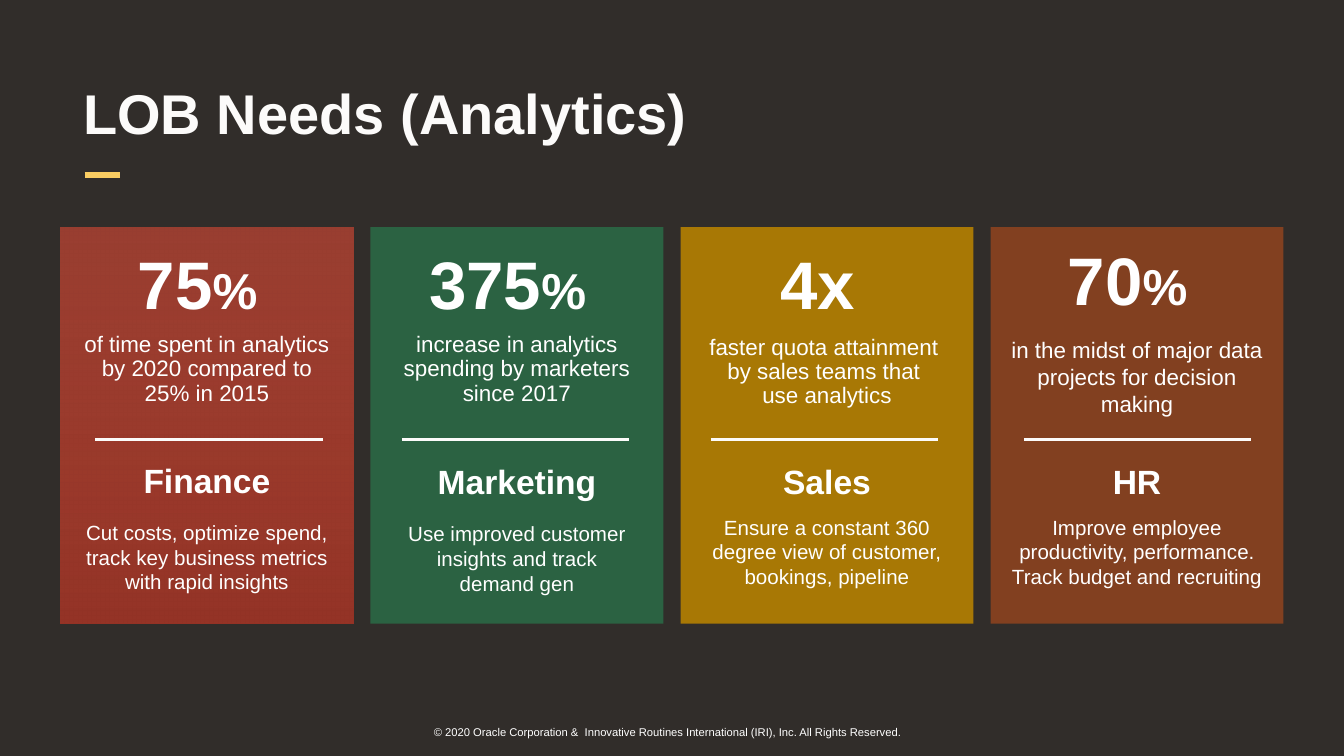
from dataclasses import dataclass

from pptx import Presentation
from pptx.dml.color import RGBColor
from pptx.enum.shapes import MSO_CONNECTOR, MSO_SHAPE
from pptx.enum.text import MSO_ANCHOR, MSO_AUTO_SIZE, PP_ALIGN
from pptx.oxml.xmlchemy import OxmlElement
from pptx.util import Inches, Pt

RECTANGLE = MSO_SHAPE.RECTANGLE
STRAIGHT = MSO_CONNECTOR.STRAIGHT
TOP, MIDDLE, BOTTOM = MSO_ANCHOR.TOP, MSO_ANCHOR.MIDDLE, MSO_ANCHOR.BOTTOM
LEFT, CENTER = PP_ALIGN.LEFT, PP_ALIGN.CENTER
NO_AUTOFIT = MSO_AUTO_SIZE.NONE
TITLE_ONLY = 5

COLORS = {
    "background": "312D2A",
    "title": "FCFBFA",
    "text": "FFFFFF",
    "accent": "FACD62",
    "finance_top": "C74634",
    "finance_bottom": "953426",
    "marketing": "2B6242",
    "sales": "A87805",
    "hr": "824020",
}
FONT = "Arial"
NO_INSET = (0, 0)
SMALL_INSET = (0.07, 0.04)

SLIDE_WIDTH = 10
SLIDE_HEIGHT = SLIDE_WIDTH * 9 / 16
CARD_LEFT, CARD_TOP, CARD_WIDTH, CARD_HEIGHT = 0.45, 1.69, 2.18, 2.95
CARD_PITCH = (7.37 - CARD_LEFT) / 3
DIVIDER_TOP, DIVIDER_WIDTH = 3.27, 1.69


@dataclass
class Card:
    name: str
    fill: str
    value: str
    unit: str
    fact: str
    need: str
    value_top: float
    fact_top: float
    fact_width: float
    fact_spacing: float
    name_middle: float
    need_top: float
    need_width: float
    divider_left: float


CARDS = [
    Card("Finance", "finance", "75", "%",
         "of time spent in analytics by 2020 compared to 25% in 2015",
         "Cut costs, optimize spend, track key business metrics with rapid insights",
         1.87, 2.44, 2.05, 0.9, 3.6, 3.87, 2.05, 0.71),
    Card("Marketing", "marketing", "375", "%",
         "increase in analytics spending by marketers\nsince 2017",
         "Use improved customer insights and track demand gen",
         1.87, 2.44, 2.07, 0.9, 3.61, 3.88, 1.71, 2.99),
    Card("Sales", "sales", "4x", "",
         "faster quota attainment \nby sales teams that \nuse analytics",
         "Ensure a constant 360 degree view of customer, bookings, pipeline",
         1.87, 2.46, 2.11, 0.9, 3.61, 3.83, 1.99, 5.29),
    Card("HR", "hr", "70", "%",
         "in the midst of major data projects for decision making",
         "Improve employee productivity, performance. Track budget and recruiting",
         1.84, 2.46, 2.05, 1.0, 3.61, 3.83, 2.05, 7.62),
]


class SlideBuilder:
    def __init__(self, slide):
        self.slide = slide
        slide.background.fill.solid()
        slide.background.fill.fore_color.rgb = self.color("background")

    def color(self, name):
        return RGBColor.from_string(COLORS[name])

    def format_frame(self, frame, inset, anchor):
        frame.word_wrap = True
        frame.auto_size = NO_AUTOFIT
        frame.vertical_anchor = anchor
        frame.margin_left = frame.margin_right = Inches(inset[0])
        frame.margin_top = frame.margin_bottom = Inches(inset[1])

    def format_paragraph(self, paragraph, size, bold, align, spacing, color="text"):
        paragraph.alignment = align
        paragraph.line_spacing = spacing
        font = paragraph.font
        font.name, font.size, font.bold = FONT, Pt(size), bold
        font.color.rgb = self.color(color)

    def title(self, text, left, top, width, height):
        shape = self.slide.shapes.title
        shape.left, shape.top = Inches(left), Inches(top)
        shape.width, shape.height = Inches(width), Inches(height)
        self.format_frame(shape.text_frame, NO_INSET, BOTTOM)
        paragraph = shape.text_frame.paragraphs[0]
        paragraph.text = text
        self.format_paragraph(paragraph, 30, True, LEFT, 0.95, "title")

    def text(self, text, left, top, width, height, size, bold=False, align=CENTER,
             spacing=1.0, inset=NO_INSET, anchor=TOP):
        shape = self.slide.shapes.add_textbox(
            Inches(left), Inches(top), Inches(width), Inches(height))
        self.format_frame(shape.text_frame, inset, anchor)
        paragraph = shape.text_frame.paragraphs[0]
        paragraph.text = text
        self.format_paragraph(paragraph, size, bold, align, spacing)
        return paragraph

    def figure(self, value, unit, left, top):
        paragraph = self.text(value, left, top, CARD_WIDTH, 0.48, 36, True, spacing=0.9)
        if unit:
            run = paragraph.add_run()
            run.text = unit
            run.font.size = Pt(27)
        paragraph.add_run().text = " "
        paragraph.add_line_break()

    def panel(self, left, fill):
        shape = self.slide.shapes.add_shape(
            RECTANGLE, Inches(left), Inches(CARD_TOP), Inches(CARD_WIDTH), Inches(CARD_HEIGHT))
        shape.shadow.inherit = False
        shape.line.fill.background()
        if fill in COLORS:
            shape.fill.solid()
            shape.fill.fore_color.rgb = self.color(fill)
            return
        shape.fill.gradient()
        shape.fill.gradient_angle = 270
        first, last = shape.fill.gradient_stops
        first.position, last.position = 0, 1
        first.color.rgb = self.color(fill + "_top")
        last.color.rgb = self.color(fill + "_bottom")
        alpha = OxmlElement("a:alpha")
        alpha.set("val", "69000")
        shape._element.spPr.xpath(".//a:gs/a:srgbClr")[0].append(alpha)

    def rule(self, left, top, width, color, weight):
        connector = self.slide.shapes.add_connector(
            STRAIGHT, Inches(left), Inches(top), Inches(left + width), Inches(top))
        connector.line.color.rgb = self.color(color)
        connector.line.width = Pt(weight)
        connector._element.spPr.append(OxmlElement("a:effectLst"))

    def card(self, card, left):
        center = left + CARD_WIDTH / 2
        self.panel(left, card.fill)
        self.figure(card.value, card.unit, left, card.value_top)
        self.text(card.fact, center - card.fact_width / 2, card.fact_top, card.fact_width, 0.62,
                  12, spacing=card.fact_spacing, inset=SMALL_INSET)
        self.rule(card.divider_left, DIVIDER_TOP, DIVIDER_WIDTH, "title", 1.5)
        self.text(card.name, left, card.name_middle - 0.15, CARD_WIDTH, 0.3, 18, True,
                  spacing=0.8, inset=SMALL_INSET, anchor=MIDDLE)
        self.text(card.need, center - card.need_width / 2, card.need_top, card.need_width, 0.57, 11)


def main():
    presentation = Presentation()
    presentation.slide_width = Inches(SLIDE_WIDTH)
    presentation.slide_height = Inches(SLIDE_HEIGHT)
    slide = presentation.slides.add_slide(presentation.slide_layouts[TITLE_ONLY])
    builder = SlideBuilder(slide)
    builder.rule(0.63, 1.3, 0.26, "accent", 3)
    builder.text(
        "© 2020 Oracle Corporation &  Innovative Routines International (IRI), Inc. "
        "All Rights Reserved.",
        3.13, 5.3, 3.75, 0.24, 6, align=LEFT, inset=(0.1, 0.1))
    builder.title("LOB Needs (Analytics)", 0.62, 0.42, 8.75, 0.68)
    for index, card in enumerate(CARDS):
        builder.card(card, CARD_LEFT + index * CARD_PITCH)
    presentation.save("out.pptx")


if __name__ == "__main__":
    main()
